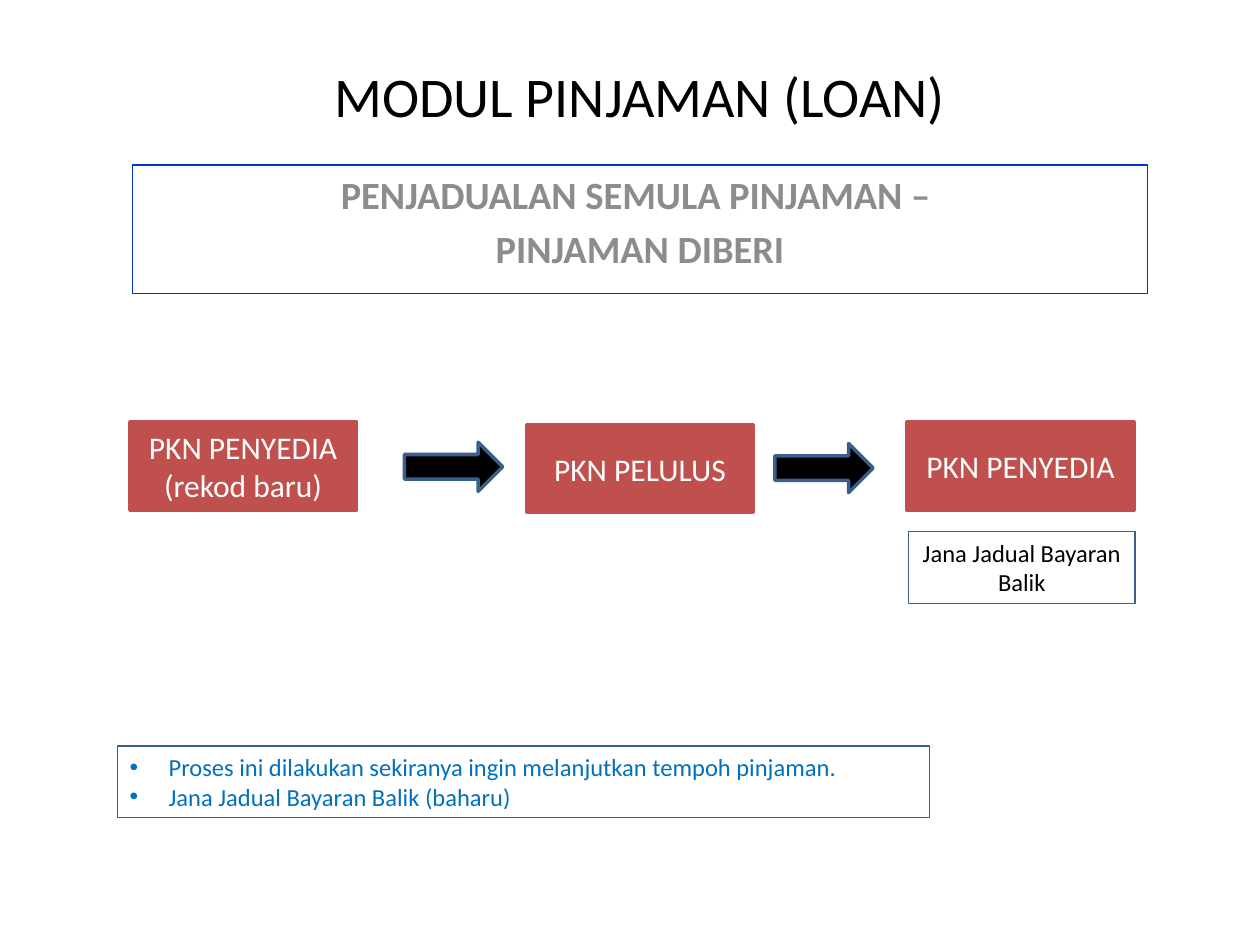
from lxml import etree
from pptx import Presentation
from pptx import util as u
from pptx.dml.color import RGBColor
from pptx.enum import shapes, text
from pptx.oxml import ns

BLACK = RGBColor(0x00, 0x00, 0x00)
WHITE = RGBColor(0xFF, 0xFF, 0xFF)
GREY = RGBColor(0x8C, 0x8C, 0x8C)
RED = RGBColor(0xC0, 0x50, 0x4D)
STEEL = RGBColor(0x3A, 0x5F, 0x8C)
ROYAL = RGBColor(0x00, 0x33, 0xCC)
BLUE = RGBColor(0x00, 0x70, 0xC0)

RECT = shapes.MSO_SHAPE.RECTANGLE
ARROW = shapes.MSO_SHAPE.RIGHT_ARROW
TOP, MIDDLE = text.MSO_ANCHOR.TOP, text.MSO_ANCHOR.MIDDLE

deck = Presentation()
deck.slide_width, deck.slide_height = u.Inches(10), u.Inches(7.5)
slide = deck.slides.add_slide(deck.slide_layouts[6])
COL = deck.slide_width / 100
ROW = deck.slide_height / 75


def add_block(kind, col, row, cols, rows, fill, line, weight):
    """Add a shape placed on the grid of 100 columns by 75 rows."""
    block = slide.shapes.add_shape(
        kind, int(col * COL), int(row * ROW), int(cols * COL), int(rows * ROW))
    block.shadow.inherit = False
    if fill is None:
        block.fill.background()
    else:
        block.fill.solid()
        block.fill.fore_color.rgb = fill
    if line is None:
        block.line.fill.background()
    else:
        block.line.color.rgb = line
        block.line.width = u.Pt(weight)
    return block


def write(block, words, size, color, anchor=TOP, bold=False,
          align=text.PP_ALIGN.CENTER):
    frame = block.text_frame
    frame.word_wrap = True
    frame.vertical_anchor = anchor
    frame.text = words
    for paragraph in frame.paragraphs:
        paragraph.alignment = align
        for run in paragraph.runs:
            run.font.name = "Calibri"
            run.font.size = u.Pt(size)
            run.font.bold = bold
            run.font.color.rgb = color
    return frame.paragraphs


# Headings
title = slide.shapes.add_textbox(
    int(19.3 * COL), int(4.4 * ROW), int(63 * COL), int(6.4 * ROW))
write(title, "MODUL PINJAMAN (LOAN)", 32, BLACK)

subtitle = add_block(RECT, 10.5, 13.1, 80.6, 10.2, None, ROYAL, 0.75)
for heading in write(subtitle, "PENJADUALAN SEMULA PINJAMAN – \nPINJAMAN DIBERI",
                     22, GREY, bold=True):
    heading.space_before = u.Pt(4.4)

# Process flow
for col, row, role in (
    (10.3, 33.5, "PKN PENYEDIA\n(rekod baru)"),
    (41.8, 33.7, "PKN PELULUS"),
    (72, 33.5, "PKN PENYEDIA"),
):
    step = add_block(RECT, col, row, 18, 7, RED, RED, 2)
    write(step, role, 18, WHITE, MIDDLE)

for col, row in ((32.1, 35.1), (61.5, 35.2)):
    add_block(ARROW, col, row, 7.8, 3.9, BLACK, STEEL, 2)

outcome = add_block(RECT, 72.1, 42.2, 18, 5.7, None, STEEL, 0.75)
write(outcome, "Jana Jadual Bayaran Balik", 14, BLACK)

# Bulleted remarks
remarks = add_block(RECT, 9.3, 59.2, 64.5, 5.7, None, STEEL, 0.75)
for remark in write(
        remarks,
        "Proses ini dilakukan sekiranya ingin melanjutkan tempoh pinjaman.\n"
        "Jana Jadual Bayaran Balik (baharu)",
        14, BLUE, align=text.PP_ALIGN.LEFT):
    properties = remark._p.get_or_add_pPr()
    properties.set("marL", str(u.Inches(0.31)))
    properties.set("indent", str(-u.Inches(0.31)))
    etree.SubElement(properties, ns.qn("a:buFont"), typeface="Arial")
    etree.SubElement(properties, ns.qn("a:buChar"), char="•")

deck.save("out.pptx")
